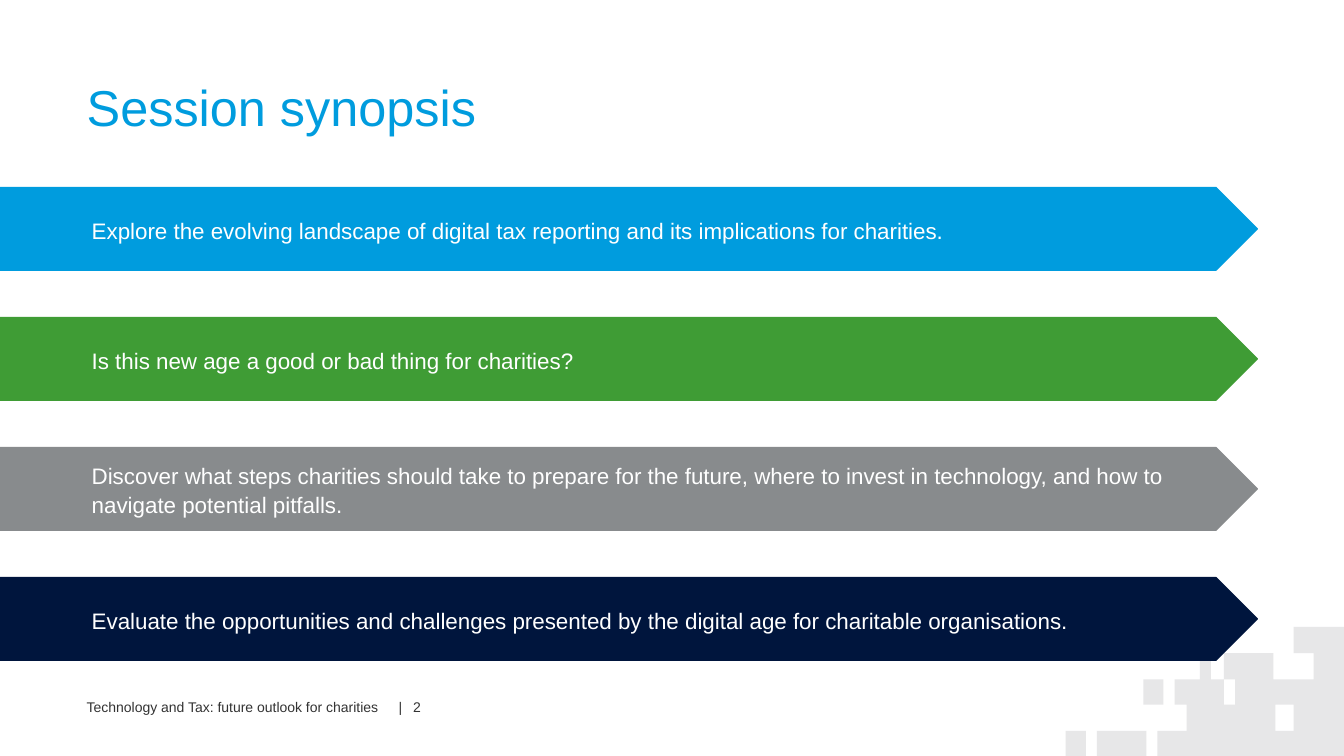
from pptx import Presentation
from pptx.dml.color import RGBColor
from pptx.enum.shapes import MSO_SHAPE
from pptx.enum.text import MSO_ANCHOR, PP_ALIGN
from pptx.util import Inches, Pt

PENTAGON = MSO_SHAPE.PENTAGON
TOP, MIDDLE = MSO_ANCHOR.TOP, MSO_ANCHOR.MIDDLE
LEFT, RIGHT = PP_ALIGN.LEFT, PP_ALIGN.RIGHT

COLORS = {"blue": "009CDE", "green": "3F9C35", "grey": "888B8D", "navy": "00153D",
          "white": "FFFFFF", "text": "333333", "pixels": "E7E7E8"}

# Content
TITLE = "Session synopsis"
BANNERS = [
    ("Explore the evolving landscape of digital tax reporting and its implications for charities.", "blue"),
    ("Is this new age a good or bad thing for charities?", "green"),
    ("Discover what steps charities should take to prepare for the future, where to invest "
     "in technology, and how to navigate potential pitfalls.", "grey"),
    ("Evaluate the opportunities and challenges presented by the digital age for charitable "
     "organisations.", "navy"),
]
# Footer: text, left, width, left inset, alignment
FOOTER = [
    ("Technology and Tax: future outlook for charities", 0.86, 3.08, 0, LEFT),
    ("|", 3.84, 0.15, 0, RIGHT),
    ("2", 4.0, 0.27, 0.1, LEFT),
]

# Pixel pattern: one large stepped outline, then blocks and holes (left, top, right, bottom)
STEPS = [
    (12.83, 6.22), (13.33, 6.22), (13.33, 7.5), (11.48, 7.5), (11.48, 7.25), (11.77, 7.25),
    (11.77, 6.99), (11.65, 6.99), (11.65, 6.74), (11.9, 6.74), (11.9, 6.48), (12.01, 6.48),
    (12.01, 6.74), (12.14, 6.74), (12.14, 6.48), (12.63, 6.48), (12.63, 6.74), (13.03, 6.74),
    (13.03, 6.48), (12.83, 6.48),
]
BLOCKS = [(10.88, 7.25, 11.37, 7.5), (10.57, 7.25, 10.77, 7.5), (11.34, 6.74, 11.54, 6.99)]
HOLES = [(12.65, 6.99, 12.83, 7.25), (12.14, 6.74, 12.25, 6.99)]

BANNER_TOP, BANNER_PITCH = 1.86, 1.29
BANNER_WIDTH, BANNER_HEIGHT = 12.47, 0.82


def color(name):
    return RGBColor.from_string(COLORS[name])


def write(shape, text, size, ink, insets=(0, 0, 0, 0), anchor=TOP, align=LEFT, spacing=1.0):
    frame = shape.text_frame
    frame.word_wrap = True
    frame.vertical_anchor = anchor
    (frame.margin_left, frame.margin_top,
     frame.margin_right, frame.margin_bottom) = map(Inches, insets)
    para = frame.paragraphs[0]
    para.text = text
    para.alignment = align
    para.line_spacing = spacing
    para.font.name = "Arial"
    para.font.size = Pt(size)
    para.font.color.rgb = color(ink)


def add_text(page, left, top, width, height, *args, **options):
    box = page.shapes.add_textbox(*map(Inches, (left, top, width, height)))
    write(box, *args, **options)


def add_pixels(page):
    outlines = [STEPS]
    outlines += [[(l, t), (r, t), (r, b), (l, b)] for l, t, r, b in BLOCKS]
    outlines += [[(l, t), (l, b), (r, b), (r, t)] for l, t, r, b in HOLES]
    outlines = [[(Inches(x), Inches(y)) for x, y in outline] for outline in outlines]
    builder = page.shapes.build_freeform(*outlines[0][0])
    for index, outline in enumerate(outlines):
        if index:
            builder.move_to(*outline[0])
        builder.add_line_segments(outline[1:], close=True)
    pixels = builder.convert_to_shape()
    pixels.shadow.inherit = False
    pixels.fill.solid()
    pixels.fill.fore_color.rgb = color("pixels")
    pixels.line.fill.background()


def add_banner(page, index, text, fill):
    top = BANNER_TOP + index * BANNER_PITCH
    banner = page.shapes.add_shape(
        PENTAGON, 0, Inches(top), Inches(BANNER_WIDTH), Inches(BANNER_HEIGHT))
    banner.shadow.inherit = False
    banner.fill.solid()
    banner.fill.fore_color.rgb = color(fill)
    banner.line.color.rgb = color(fill)
    banner.line.width = Pt(1)
    write(banner, text, 16, "white", (0.91, 0.16, 0.16, 0.16), MIDDLE, spacing=1.1)


def main():
    deck = Presentation()
    deck.slide_width, deck.slide_height = Inches(13.33), Inches(7.5)
    page = deck.slides.add_slide(deck.slide_layouts[6])

    # Background pattern and footer
    add_pixels(page)
    for text, left, width, inset, align in FOOTER:
        add_text(page, left, 6.93, width, 0.17, text, 10, "text", (inset, 0, 0, 0), align=align)

    # Title and banners
    add_text(page, 0.86, 0.76, 11.61, 0.61, TITLE, 36, "blue")
    for index, (text, fill) in enumerate(BANNERS):
        add_banner(page, index, text, fill)

    deck.save("out.pptx")


if __name__ == "__main__":
    main()
